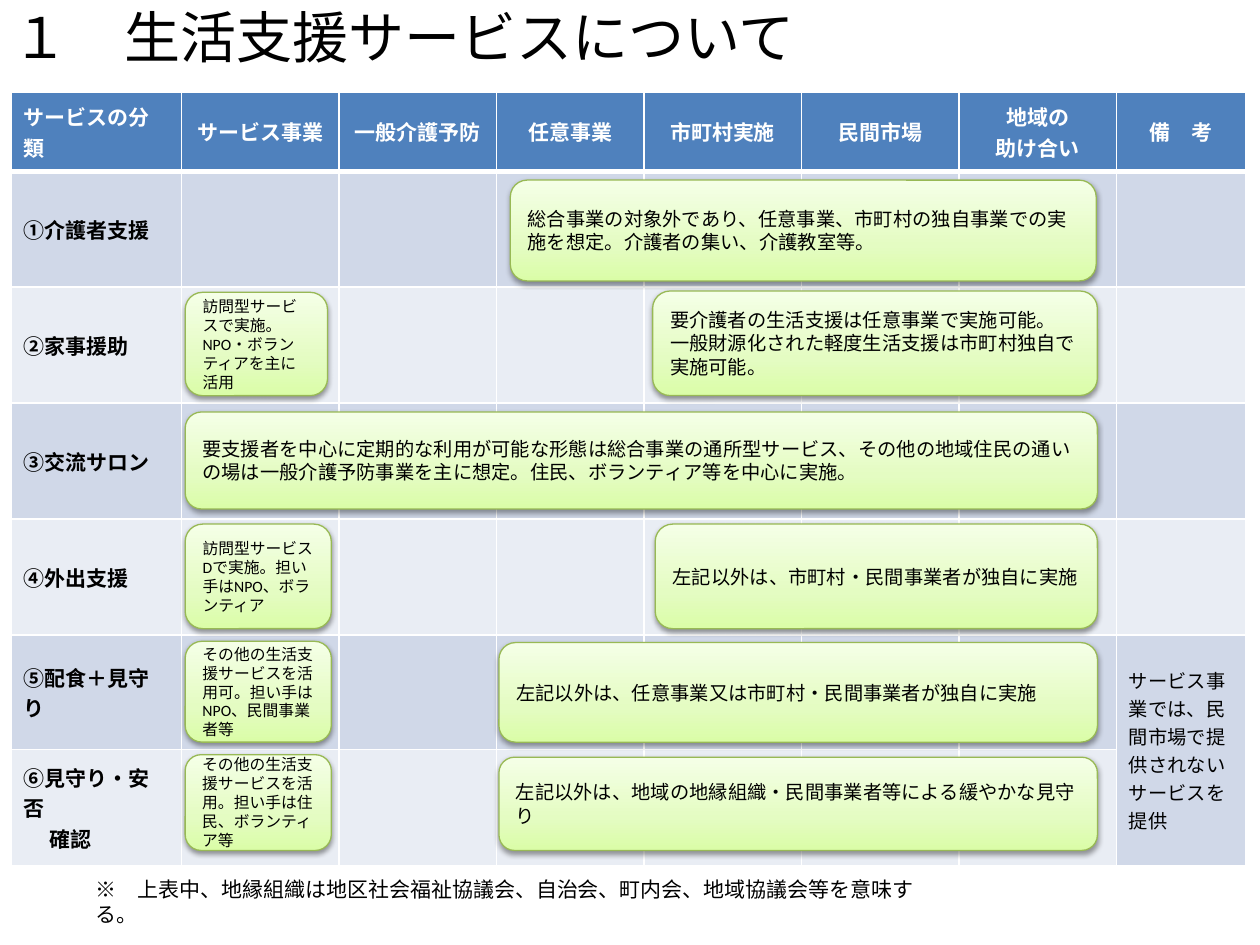
from lxml import etree
from pptx import Presentation
from pptx.dml.color import RGBColor
from pptx.enum.shapes import MSO_SHAPE
from pptx.enum.text import MSO_ANCHOR, PP_ALIGN
from pptx.oxml import parse_xml
from pptx.oxml.ns import nsdecls, qn
from pptx.util import Inches, Pt

MIDDLE, TOP = MSO_ANCHOR.MIDDLE, MSO_ANCHOR.TOP
LEFT, CENTER = PP_ALIGN.LEFT, PP_ALIGN.CENTER
ROUNDED = MSO_SHAPE.ROUNDED_RECTANGLE

BLACK, WHITE, HEADER_BLUE = "000000", "FFFFFF", "4F81BD"
BANDS = ("D0D8E8", "E9EDF4")
CARD_LINE = "98B955"
CARD_STOPS = ((0, "DAFDA7"), (35, "E4FCC2"), (100, "F5FFE7"))

COLUMN_WIDTHS = (1.35, 1.25, 1.25, 1.17, 1.25, 1.25, 1.25, 1.03)
ROW_HEIGHTS = (0.63, 0.92, 0.92, 0.92, 0.92, 0.91, 0.92)
HEADERS = ("サービスの分類", "サービス事業", "一般介護予防", "任意事業",
           "市町村実施", "民間市場", "地域の\n助け合い", "備　考")
SERVICES = ("①介護者支援", "②家事援助", "③交流サロン", "④外出支援",
            "⑤配食＋見守り", "⑥見守り・安否\n確認")
REMARK = "サービス事業では、民間市場で提供されないサービスを提供"

# left, top, width, height relative to the table; text size; text
CARDS = (
    (3.96, 0.70, 4.65, 0.80, 11,
     "総合事業の対象外であり、任意事業、市町村の独自事業での実施を想定。介護者の集い、介護教室等。"),
    (5.09, 1.58, 3.53, 0.83, 11,
     "要介護者の生活支援は任意事業で実施可能。\n一般財源化された軽度生活支援は市町村独自で実施可能。"),
    (1.38, 1.59, 1.13, 0.82, 9, "訪問型サービスで実施。NPO・ボランティアを主に活用"),
    (1.38, 2.54, 7.24, 0.77, 11,
     "要支援者を中心に定期的な利用が可能な形態は総合事業の通所型サービス、"
     "その他の地域住民の通いの場は一般介護予防事業を主に想定。住民、ボランティア等を中心に実施。"),
    (1.38, 3.43, 1.16, 0.83, 9, "訪問型サービスDで実施。担い手はNPO、ボランティア"),
    (5.11, 3.43, 3.51, 0.83, 11, "左記以外は、市町村・民間事業者が独自に実施"),
    (1.38, 4.36, 1.16, 0.80, 9, "その他の生活支援サービスを活用可。担い手はNPO、民間事業者等"),
    (3.87, 5.28, 4.75, 0.74, 11, "左記以外は、地域の地縁組織・民間事業者等による緩やかな見守り"),
    (3.87, 4.37, 4.75, 0.79, 11, "左記以外は、任意事業又は市町村・民間事業者が独自に実施"),
    (1.38, 5.26, 1.16, 0.76, 9, "その他の生活支援サービスを活用。担い手は住民、ボランティア等"),
)


def color(hex_string):
    return RGBColor.from_string(hex_string)


def write(frame, text, size, font="Calibri", ink=BLACK, bold=False, align=LEFT):
    frame.text = text
    for para in frame.paragraphs:
        para.alignment = align
        para.font.name = font
        para.font.size = Pt(size)
        para.font.bold = bold
        para.font.color.rgb = color(ink)


def add_label(page, box, text, size):
    label = page.shapes.add_textbox(*map(Inches, box))
    label.text_frame.word_wrap = True
    label.text_frame.vertical_anchor = TOP
    write(label.text_frame, text, size)


def set_borders(cell, bottom_width):
    properties = cell._tc.get_or_add_tcPr()
    sides = (("lnL", 1), ("lnR", 1), ("lnT", 1), ("lnB", bottom_width))
    for position, (side, width) in enumerate(sides):
        line = parse_xml(
            f'<a:{side} {nsdecls("a")} w="{Pt(width)}"><a:solidFill>'
            f'<a:srgbClr val="{WHITE}"/></a:solidFill></a:{side}>')
        properties.insert(position, line)


def add_service_table(page, left, top):
    box = (left, top, sum(COLUMN_WIDTHS), sum(ROW_HEIGHTS))
    table = page.shapes.add_table(
        len(ROW_HEIGHTS), len(COLUMN_WIDTHS), *map(Inches, box)).table
    for column, width in zip(table.columns, COLUMN_WIDTHS):
        column.width = Inches(width)
    for index, (row, height) in enumerate(zip(table.rows, ROW_HEIGHTS)):
        row.height = Inches(height)
        for cell in row.cells:
            cell.fill.solid()
            cell.fill.fore_color.rgb = color(
                BANDS[(index - 1) % 2] if index else HEADER_BLUE)
            cell.vertical_anchor = MIDDLE
            set_borders(cell, 1 if index else 3)

    for index, header in enumerate(HEADERS):
        write(table.cell(0, index).text_frame, header, 12, "Arial", WHITE, True,
              CENTER if index else LEFT)
    for index, service in enumerate(SERVICES, 1):
        write(table.cell(index, 0).text_frame, service, 12, "Arial", bold=True)
    continuation = table.cell(6, 0).text_frame.paragraphs[1]
    continuation._p.get_or_add_pPr().set("marL", str(Inches(0.2)))

    remark = table.cell(5, 7)
    remark.merge(table.cell(6, 7))
    write(remark.text_frame, REMARK, 11)


def style_card(card):
    """Give the card its three-stop green gradient, thin line and soft shadow."""
    card.line.color.rgb = color(CARD_LINE)
    card.line.width = Pt(0.75)
    card.fill.gradient()
    card.fill.gradient_angle = 90
    stops = card._element.spPr.find(qn("a:gradFill")).find(qn("a:gsLst"))
    for stop in list(stops):
        stops.remove(stop)
    for percent, shade in CARD_STOPS:
        stop = etree.SubElement(stops, qn("a:gs"), pos=str(percent * 1000))
        etree.SubElement(stop, qn("a:srgbClr"), val=shade)
    card.shadow.inherit = False
    effects = card._element.spPr.find(qn("a:effectLst"))
    effects.append(parse_xml(
        f'<a:outerShdw {nsdecls("a")} blurRad="{Pt(3.1)}" dist="{Pt(1.6)}" '
        f'dir="5400000" rotWithShape="0"><a:srgbClr val="{BLACK}">'
        '<a:alpha val="38000"/></a:srgbClr></a:outerShdw>'))


def add_cards(page, left, top):
    for x, y, width, height, size, text in CARDS:
        box = (left + x, top + y, width, height)
        card = page.shapes.add_shape(ROUNDED, *map(Inches, box))
        style_card(card)
        card.text_frame.word_wrap = True
        card.text_frame.vertical_anchor = MIDDLE
        write(card.text_frame, text, size)


def main():
    deck = Presentation()
    deck.slide_width, deck.slide_height = Inches(10), Inches(7.5)
    page = deck.slides.add_slide(deck.slide_layouts[6])
    add_service_table(page, 0.09, 0.73)
    add_cards(page, 0.09, 0.73)
    add_label(page, (0.66, 6.91, 6.71, 0.3),
              "※　上表中、地縁組織は地区社会福祉協議会、自治会、町内会、地域協議会等を意味する。", 12)
    add_label(page, (0, -0.03, 10, 0.47), "１　生活支援サービスについて", 32)
    deck.save("out.pptx")


if __name__ == "__main__":
    main()
